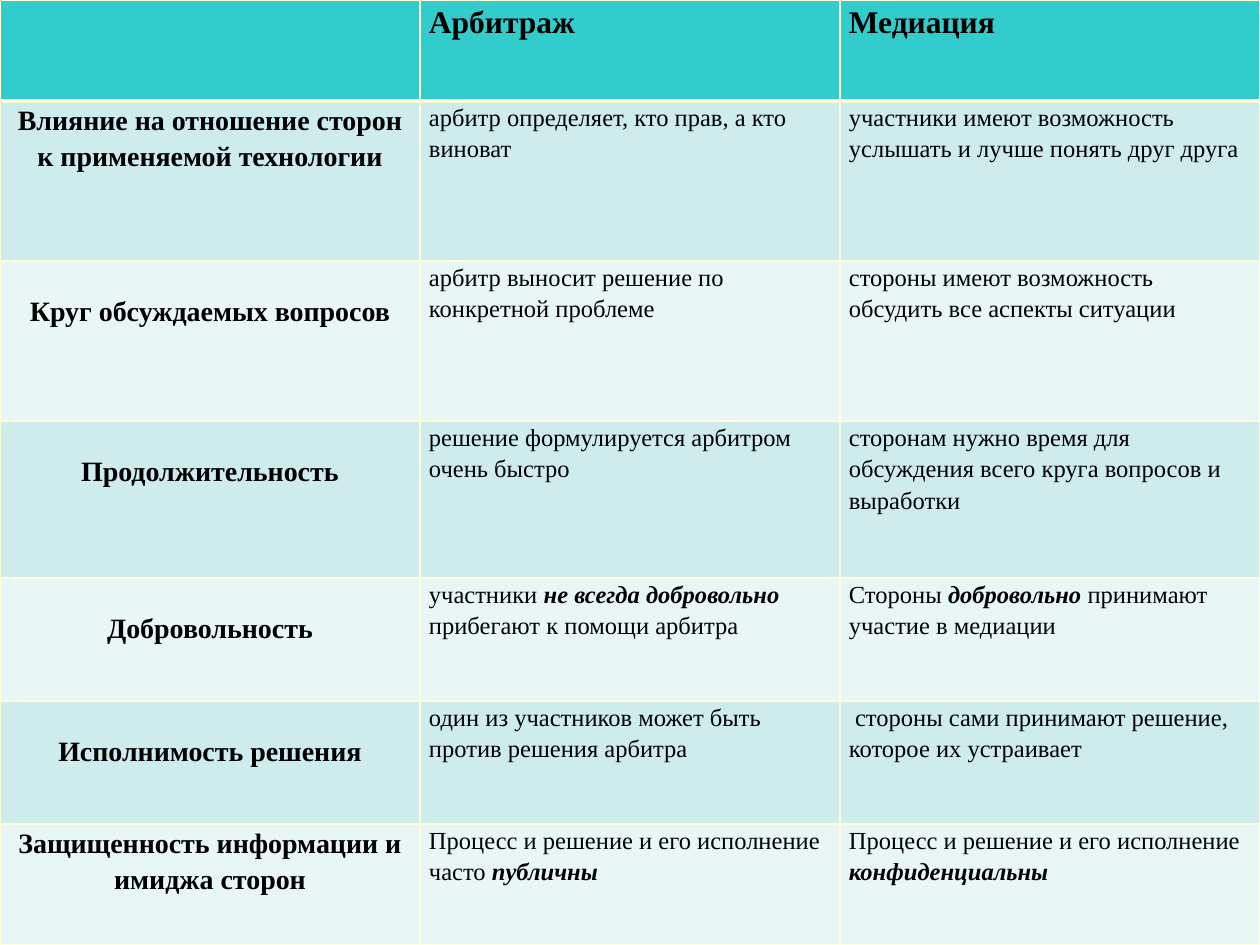
from lxml.etree import SubElement
from pptx import Presentation
from pptx.dml.color import RGBColor
from pptx.enum.text import PP_ALIGN as Align
from pptx.oxml.ns import qn
from pptx.util import Emu, Pt

COLUMN_WIDTHS = [420, 420, 420]
ROW_HEIGHTS = [101, 160, 160, 157, 123, 123, 121]
HEADINGS = ["", "Арбитраж", "Медиация"]
LABEL_DROP = 31
COMPARISON = [
    ("Влияние на отношение сторон к применяемой технологии", 0,
     "арбитр определяет, кто прав, а кто виноват",
     "участники имеют возможность услышать и лучше понять друг друга"),
    ("Круг обсуждаемых вопросов", LABEL_DROP,
     "арбитр выносит решение по конкретной проблеме",
     "стороны имеют возможность обсудить все аспекты ситуации"),
    ("Продолжительность", LABEL_DROP,
     "решение формулируется арбитром очень быстро",
     "сторонам нужно время для обсуждения всего круга вопросов и выработки"),
    ("Добровольность", LABEL_DROP,
     "участники *не всегда добровольно *прибегают к помощи арбитра",
     "Стороны *добровольно *принимают участие в медиации"),
    ("Исполнимость решения", LABEL_DROP,
     "один из участников может быть против решения арбитра",
     " стороны сами принимают решение, которое их устраивает"),
    ("Защищенность информации и имиджа сторон", 0,
     "Процесс и решение и его исполнение часто *публичны*",
     "Процесс и решение и его исполнение *конфиденциальны*"),
]


def px(length):
    return Emu(round(length * 914400 / 126))


def color(value):
    return RGBColor.from_string(value)


class ComparisonSlide:
    """Holds the style of the comparison and the slide it is drawn on."""

    font_name = "Times New Roman"
    ink, paper, header = "000000", "FFFFD9", "33CCCC"
    bands = ["CEECEC", "E8F6F6"]

    def __init__(self, deck):
        self.slide = deck.slides.add_slide(deck.slide_layouts[6])
        background = self.slide.background.fill
        background.solid()
        background.fore_color.rgb = color(self.paper)

    def table(self, widths, heights):
        frame = self.slide.shapes.add_table(
            len(heights), len(widths), 0, 0, px(sum(widths)), px(sum(heights)))
        table = frame.table
        for column, width in zip(table.columns, widths):
            column.width = px(width)
        for row, height in zip(table.rows, heights):
            row.height = px(height)
        return table

    def borders(self, cell, top, bottom):
        properties = cell._tc.get_or_add_tcPr()
        for side, width in (("L", 1), ("R", 1), ("T", top), ("B", bottom)):
            line = SubElement(properties, qn(f"a:ln{side}"), w=str(Pt(width)))
            fill = SubElement(line, qn("a:solidFill"))
            SubElement(fill, qn("a:srgbClr"), val=self.paper)

    def cell(self, cell, text, fill, size, bold=False, align=Align.LEFT,
             drop=0, top=1, bottom=1):
        self.borders(cell, top, bottom)
        cell.fill.solid()
        cell.fill.fore_color.rgb = color(fill)
        cell.margin_left = cell.margin_right = px(9)
        cell.margin_top, cell.margin_bottom = px(drop), 0
        para = cell.text_frame.paragraphs[0]
        para.alignment = align
        para.line_spacing = 1.15
        for index, piece in enumerate(text.split("*")):
            if piece:
                self.span(para, piece, size, bold, emphasis=index % 2 == 1)

    def span(self, para, text, size, bold, emphasis):
        span = para.add_run()
        span.text = text
        font = span.font
        font.name, font.size = self.font_name, Pt(size)
        font.bold, font.italic = bold or emphasis, emphasis
        font.color.rgb = color(self.ink)


def main():
    deck = Presentation()
    deck.slide_width, deck.slide_height = px(1260), px(945)
    page = ComparisonSlide(deck)
    table = page.table(COLUMN_WIDTHS, ROW_HEIGHTS)
    for column, heading in enumerate(HEADINGS):
        page.cell(table.cell(0, column), heading, page.header, 18, bold=True, bottom=3)
    for row, (label, drop, *answers) in enumerate(COMPARISON, start=1):
        band = page.bands[(row - 1) % 2]
        top = 3 if row == 1 else 1
        page.cell(table.cell(row, 0), label, band, 16, bold=True,
                  align=Align.CENTER, drop=drop, top=top)
        for column, answer in enumerate(answers, start=1):
            page.cell(table.cell(row, column), answer, band, 14, top=top)
    deck.save("out.pptx")


if __name__ == "__main__":
    main()
